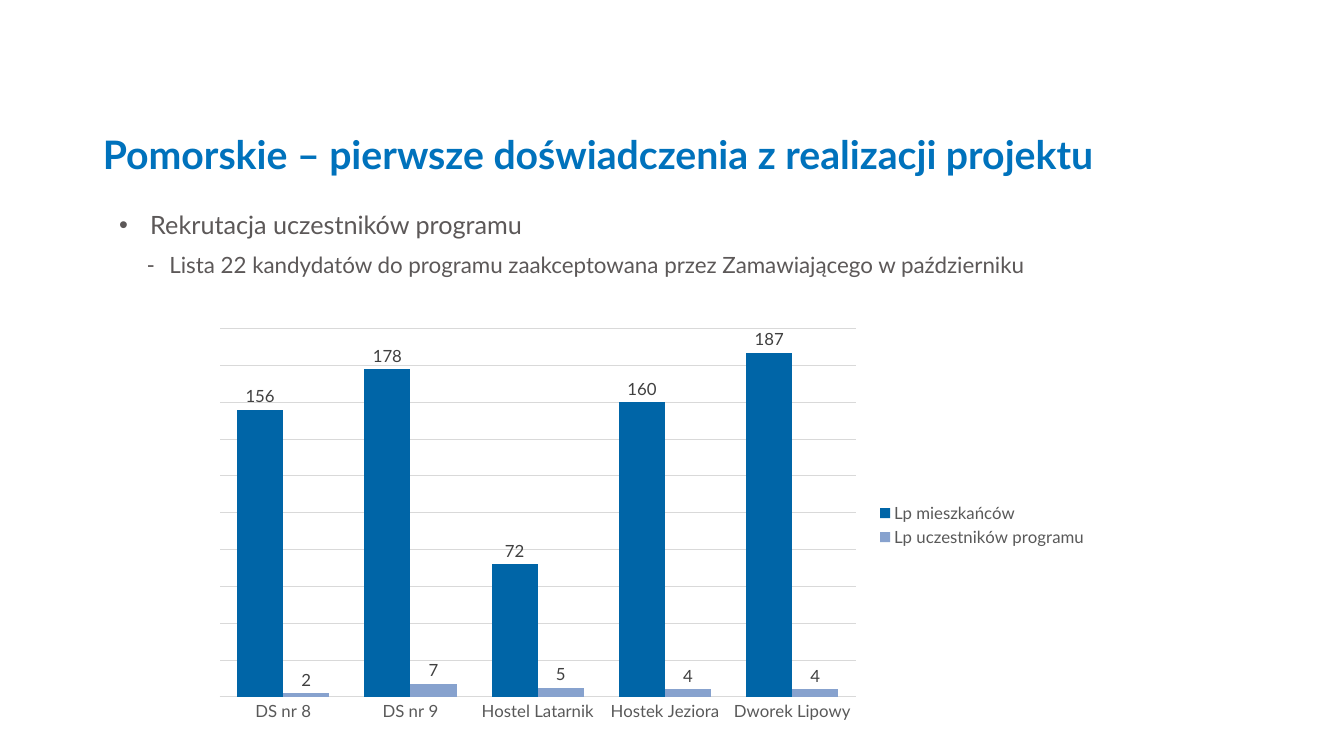
from lxml import etree
from pptx import Presentation
from pptx.chart.data import CategoryChartData
from pptx.dml.color import RGBColor
from pptx.enum.chart import XL_CHART_TYPE, XL_LABEL_POSITION, XL_LEGEND_POSITION, XL_TICK_MARK
from pptx.enum.text import MSO_ANCHOR, MSO_AUTO_SIZE, PP_ALIGN
from pptx.oxml.ns import qn
from pptx.util import Inches, Pt

CLUSTERED = XL_CHART_TYPE.COLUMN_CLUSTERED
OUTSIDE_END = XL_LABEL_POSITION.OUTSIDE_END
LEGEND_RIGHT = XL_LEGEND_POSITION.RIGHT
NO_TICKS = XL_TICK_MARK.NONE
TOP = MSO_ANCHOR.TOP
NO_FIT = MSO_AUTO_SIZE.NONE
LEFT = PP_ALIGN.LEFT

TITLE_BLUE = RGBColor(0x00, 0x72, 0xBC)
BODY_GREY = RGBColor(0x5C, 0x58, 0x58)
BLACK = RGBColor(0x00, 0x00, 0x00)
AXIS_GREY = RGBColor(0x59, 0x59, 0x59)
LABEL_GREY = RGBColor(0x40, 0x40, 0x40)
GRID_GREY = RGBColor(0xD9, 0xD9, 0xD9)
RESIDENT_BLUE = RGBColor(0x00, 0x65, 0xA7)
PARTICIPANT_BLUE = RGBColor(0x87, 0xA2, 0xCE)

FONT = "Lato"
TITLE = "Pomorskie – pierwsze doświadczenia z realizacji projektu"
POINTS = [
    ("Rekrutacja uczestników programu", "•", 18, 0.47, -0.31),
    ("Lista 22 kandydatów do programu zaakceptowana przez Zamawiającego w październiku",
     "-", 16, 0.66, -0.22),
]
PLACES = ["DS nr 8", "DS nr 9", "Hostel Latarnik", "Hostek Jeziora", "Dworek Lipowy"]
COUNTS = [
    ("Lp mieszkańców", [156, 178, 72, 160, 187], RESIDENT_BLUE),
    ("Lp uczestników programu", [2, 7, 5, 4, 4], PARTICIPANT_BLUE),
]


def style_font(font, size, color, name=FONT, bold=False):
    font.size = Pt(size)
    font.name = name
    font.bold = bold
    font.color.rgb = color


def style_line(line):
    line.color.rgb = GRID_GREY
    line.width = Pt(0.75)


def place(placeholder, left, top, width, height):
    placeholder.left, placeholder.top = Inches(left), Inches(top)
    placeholder.width, placeholder.height = Inches(width), Inches(height)
    frame = placeholder.text_frame
    frame.auto_size = NO_FIT
    frame.vertical_anchor = TOP
    frame.word_wrap = True
    return frame


def fill_title(placeholder, *box):
    frame = place(placeholder, *box)
    frame.text = TITLE
    heading = frame.paragraphs[0]
    heading.alignment = LEFT
    style_font(heading.runs[0].font, 28, TITLE_BLUE, bold=True)


def fill_points(placeholder, *box):
    frame = place(placeholder, *box)
    for level, (wording, bullet, size, margin, indent) in enumerate(POINTS):
        point = frame.add_paragraph() if level else frame.paragraphs[0]
        point.text = wording
        point.level = level
        point.space_before = Pt(8 if level else 0)
        properties = point._p.get_or_add_pPr()
        properties.set("marL", str(Inches(margin)))
        properties.set("indent", str(Inches(indent)))
        etree.SubElement(properties, qn("a:buFont"), typeface="Arial")
        etree.SubElement(properties, qn("a:buChar"), char=bullet)
        style_font(point.runs[0].font, size, BODY_GREY)


def fix_plot_area(chart, **fractions):
    plot_area = chart._chartSpace.chart.plotArea
    for automatic in plot_area.findall(qn("c:layout")):
        plot_area.remove(automatic)
    layout = etree.Element(qn("c:layout"))
    plot_area.insert(0, layout)
    manual = etree.SubElement(layout, qn("c:manualLayout"))
    settings = {"layoutTarget": "inner", "xMode": "edge", "yMode": "edge", **fractions}
    for tag, setting in settings.items():
        etree.SubElement(manual, qn(f"c:{tag}"), val=str(setting))


def add_counts_chart(slide, left, top, width, height):
    counts = CategoryChartData()
    counts.categories = PLACES
    for name, numbers, _ in COUNTS:
        counts.add_series(name, numbers)
    chart = slide.shapes.add_chart(
        CLUSTERED, Inches(left), Inches(top), Inches(width), Inches(height), counts).chart
    style_font(chart.font, 10, BLACK, "Arial")
    chart.has_title = False
    chart.has_legend = True
    chart.legend.position = LEGEND_RIGHT
    chart.legend.include_in_layout = False
    style_font(chart.legend.font, 12, AXIS_GREY)

    places = chart.category_axis
    places.major_tick_mark = NO_TICKS
    style_font(places.tick_labels.font, 12, AXIS_GREY)
    style_line(places.format.line)
    people = chart.value_axis
    people.visible = False
    people.minimum_scale, people.maximum_scale, people.major_unit = 0, 200, 20
    people.has_major_gridlines = True
    style_line(people.major_gridlines.format.line)

    columns = chart.plots[0]
    columns.gap_width = 76
    columns.overlap = 0
    columns.vary_by_categories = False
    for series, (_, _, color) in zip(columns.series, COUNTS):
        series.format.fill.solid()
        series.format.fill.fore_color.rgb = color
        labels = series.data_labels
        labels.show_value = True
        labels.position = OUTSIDE_END
        style_font(labels.font, 12, LABEL_GREY)
    fix_plot_area(chart, x=0.02, y=0.02, w=0.71, h=0.9)


def build_recruitment_slide(presentation):
    slide = presentation.slides.add_slide(presentation.slide_layouts[1])
    fill_title(slide.shapes.title, 0.92, 1.24, 11.5, 0.69)
    fill_points(slide.placeholders[1], 0.92, 2.03, 11.5, 5.31)
    add_counts_chart(slide, 2, 3.18, 8.89, 4.06)


def main():
    presentation = Presentation()
    presentation.slide_width = Inches(13.33)
    presentation.slide_height = Inches(7.5)
    build_recruitment_slide(presentation)
    presentation.save("out.pptx")


if __name__ == "__main__":
    main()
